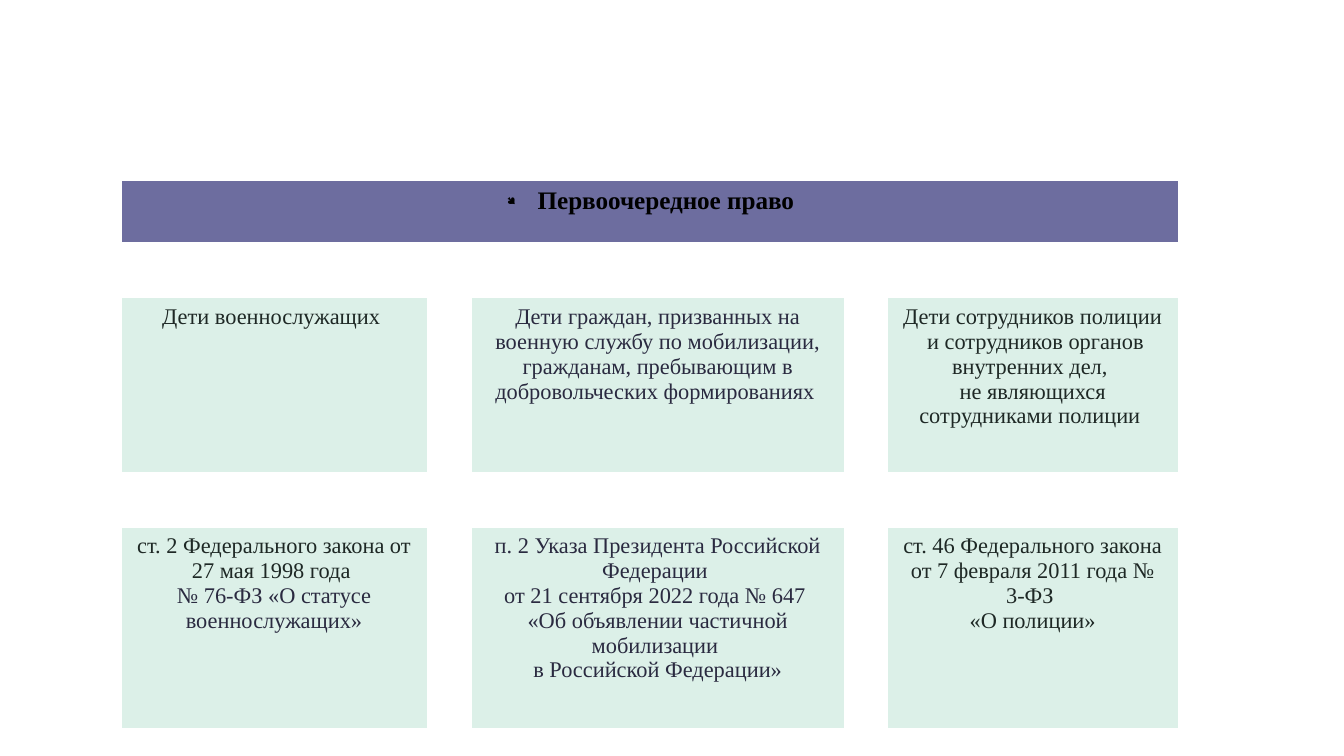
from lxml.etree import SubElement
from pptx import Presentation
from pptx.dml.color import RGBColor
from pptx.enum.text import PP_ALIGN as Align
from pptx.oxml.ns import qn
from pptx.util import Inches, Pt

COLORS = {"header": "6D6D9F", "card": "DCF0E8", "border": "FFFFFF",
          "black": "000000", "green": "1E2825", "violet": "2A2A40"}
COLUMN_WIDTHS = [2.28, 0.33, 2.77, 0.32, 2.17]
ROW_HEIGHTS = [0.47, 0.4, 1.3, 0.4, 1.5]
HEADER = "Первоочередное право"

# Cards by (row, column): spans of text and colour
CARDS = {
    (2, 0): [("Дети военнослужащих ", "green")],
    (2, 2): [("Дети граждан, призванных на военную службу по мобилизации, "
              "гражданам, пребывающим в добровольческих формированиях ", "violet")],
    (2, 4): [("Дети сотрудников полиции\n и сотрудников органов внутренних дел, \n"
              "не являющихся сотрудниками полиции ", "green")],
    (4, 0): [("ст. 2 Федерального закона от 27 мая 1998 года \n", "green"),
             ("№ 76-ФЗ «О статусе военнослужащих»", "violet")],
    (4, 2): [("п. 2 Указа Президента Российской Федерации \n"
              "от 21 сентября 2022 года № 647 \n"
              "«Об объявлении частичной мобилизации \n"
              "в Российской Федерации»", "violet")],
    (4, 4): [("ст. 46 Федерального закона от 7 февраля 2011 года № 3-ФЗ \n"
              "«О полиции»", "green")],
}


def write(cell, spans, size, bold=False):
    para = cell.text_frame.paragraphs[0]
    para.alignment = Align.CENTER
    for text, color in spans:
        for number, line in enumerate(text.split("\n")):
            if number:
                para.add_line_break()
            if not line:
                continue
            span = para.add_run()
            span.text = line
            span.font.color.rgb = RGBColor.from_string(COLORS[color])
            font_format = {"name": "Times New Roman", "size": Pt(size), "bold": bold}
            for name, value in font_format.items():
                setattr(span.font, name, value)
    return para


def add_border(cell, side, width):
    line = SubElement(cell._tc.get_or_add_tcPr(), qn(f"a:ln{side}"), w=str(Pt(width)))
    fill = SubElement(line, qn("a:solidFill"))
    SubElement(fill, qn("a:srgbClr"), val=COLORS["border"])


# Slide in 16:9
deck = Presentation()
deck.slide_width = Inches(10)
deck.slide_height = deck.slide_width * 9 // 16
page = deck.slides.add_slide(deck.slide_layouts[6])

# Table grid
frame = page.shapes.add_table(
    len(ROW_HEIGHTS), len(COLUMN_WIDTHS), Inches(0.9), Inches(1.34),
    Inches(sum(COLUMN_WIDTHS)), Inches(sum(ROW_HEIGHTS)))
table = frame.table
table.first_row = table.horz_banding = False
for column, width in zip(table.columns, COLUMN_WIDTHS):
    column.width = Inches(width)
for row, height in zip(table.rows, ROW_HEIGHTS):
    row.height = Inches(height)

# Borders come before the fill in each cell
for row_index in range(len(ROW_HEIGHTS)):
    for column_index in range(len(COLUMN_WIDTHS)):
        cell = table.cell(row_index, column_index)
        for side in "LRTB":
            under_header = (row_index, side) in [(0, "B"), (1, "T")]
            add_border(cell, side, 1.47 if under_header else 0.45)
        fill_name = "header" if row_index == 0 else "card"
        if row_index == 0 or (row_index, column_index) in CARDS:
            cell.fill.solid()
            cell.fill.fore_color.rgb = RGBColor.from_string(COLORS[fill_name])
        else:
            cell.fill.background()

# Header with bullet
header = table.cell(0, 0)
header.merge(table.cell(0, len(COLUMN_WIDTHS) - 1))
para = write(header, [(HEADER, "black")], 13.5, bold=True)
properties = para._p.get_or_add_pPr()
properties.set("marL", str(Inches(0.24)))
properties.set("indent", str(Inches(-0.23)))
bullet_color = SubElement(properties, qn("a:buClr"))
SubElement(bullet_color, qn("a:srgbClr"), val=COLORS["black"])
SubElement(properties, qn("a:buSzPct"), val="45000")
SubElement(properties, qn("a:buFont"), typeface="Wingdings", charset="2")
SubElement(properties, qn("a:buChar"), char="●")

# Cards
for (row_index, column_index), spans in CARDS.items():
    write(table.cell(row_index, column_index), spans, 12)

deck.save("out.pptx")
